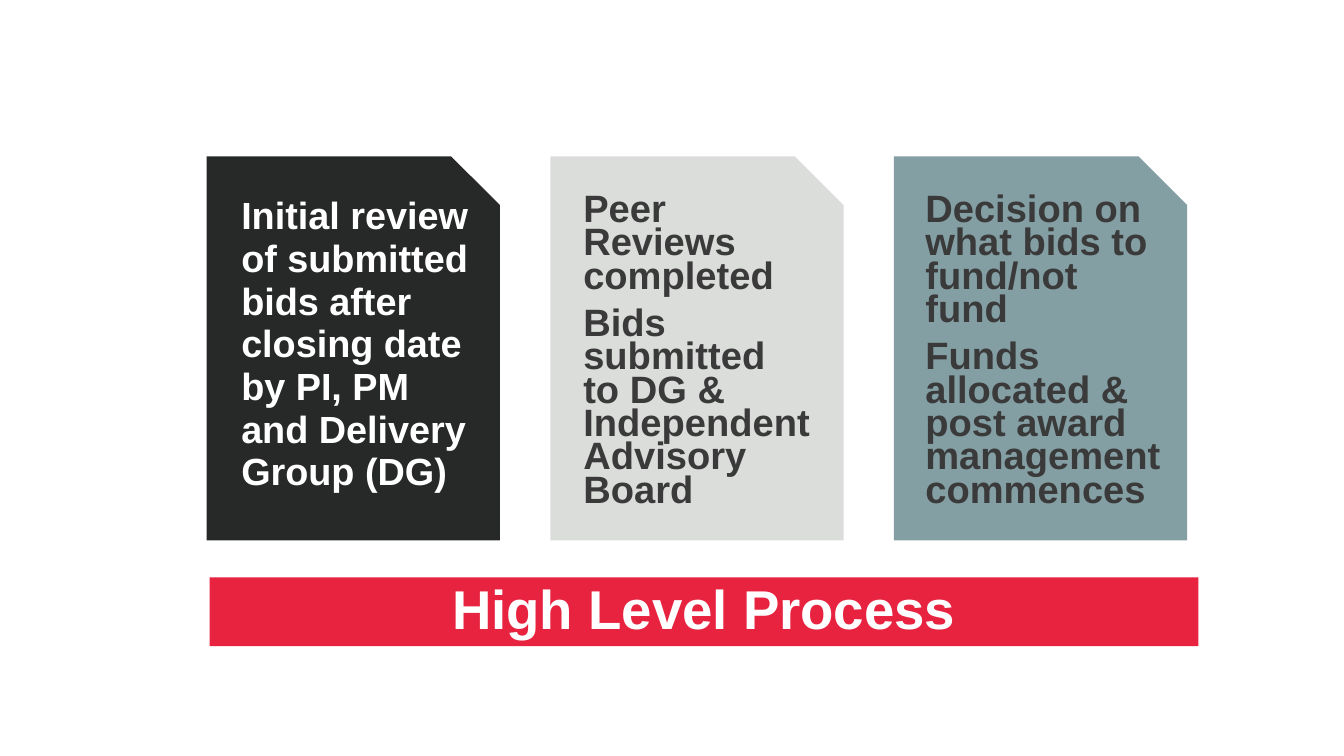
from pptx import Presentation
from pptx.dml.color import RGBColor
from pptx.enum.shapes import MSO_SHAPE
from pptx.enum.text import MSO_ANCHOR, PP_ALIGN
from pptx.oxml.ns import qn
from pptx.util import Cm, Pt

WHITE = RGBColor(0xFF, 0xFF, 0xFF)
BLACK = RGBColor(0x27, 0x29, 0x28)
INK = RGBColor(0x3A, 0x3A, 0x3A)
GREY = RGBColor(0xDB, 0xDD, 0xDB)
TEAL = RGBColor(0x84, 0x9F, 0xA4)
RED = RGBColor(0xE8, 0x23, 0x40)

TITLE = "High Level Process"
# paragraphs, card colour, text colour, text size, line spacing, text width in cm
STAGES = [
    (["Initial review of submitted bids after closing date by PI, PM and Delivery Group (DG)"],
     BLACK, WHITE, 27, 0.94, 7.34),
    (["Peer Reviews completed",
      "Bids submitted to DG & Independent Advisory Board"],
     GREY, INK, 27.2, 0.73, 7.34),
    (["Decision on what bids to fund/not fund",
      "Funds allocated & post award management commences"],
     TEAL, INK, 27.2, 0.73, 7.67),
]

CARD_LEFT, CARD_TOP = 5.21, 3.94
CARD_WIDTH, CARD_HEIGHT = 7.39, 9.68
CARD_STEP = 8.66


def place(shape, left, top, width, height):
    shape.left, shape.top = Cm(left), Cm(top)
    shape.width, shape.height = Cm(width), Cm(height)


def write(shape, texts, size, color, spacing, align=PP_ALIGN.LEFT,
          anchor=MSO_ANCHOR.TOP, top=0.0, bottom=0.0):
    frame = shape.text_frame
    frame.word_wrap = True
    frame.vertical_anchor = anchor
    frame.margin_left = frame.margin_right = Cm(0.8)
    frame.margin_top, frame.margin_bottom = Cm(top), Cm(bottom)
    for number, text in enumerate(texts):
        para = frame.add_paragraph() if number else frame.paragraphs[0]
        para.alignment = align
        para.line_spacing = spacing
        para.space_before = Pt(10 if number else 0)
        properties = para._p.get_or_add_pPr()
        properties.set("marL", "0")
        properties.set("indent", "0")
        properties.append(properties.makeelement(qn("a:buNone"), {}))
        span = para.add_run()
        span.text = text
        span.font.name = "Arial"
        span.font.size = Pt(size)
        span.font.bold = True
        span.font.color.rgb = color


deck = Presentation()
deck.slide_width, deck.slide_height = Cm(33.87), Cm(19.05)
page = deck.slides.add_slide(deck.slide_layouts[1])
title, body = page.placeholders

place(title, 5.28, 14.55, 24.92, 1.73)
title.fill.solid()
title.fill.fore_color.rgb = RED
write(title, [TITLE], 39, WHITE, 0.9, align=PP_ALIGN.CENTER, anchor=MSO_ANCHOR.MIDDLE)

for number, (texts, fill, color, size, spacing, text_width) in enumerate(STAGES):
    left = CARD_LEFT + number * CARD_STEP
    card = page.shapes.add_shape(MSO_SHAPE.SNIP_1_RECTANGLE, Cm(left), Cm(CARD_TOP),
                                 Cm(CARD_WIDTH), Cm(CARD_HEIGHT))
    card.shadow.inherit = False
    card.fill.solid()
    card.fill.fore_color.rgb = fill
    card.line.fill.background()
    if number == 0:
        box = body
        card.element.addnext(body.element)
    else:
        box = page.shapes.add_textbox(0, 0, 0, 0)
    # The text starts a little further right on the first card than on the last
    place(box, left + 0.07 - 0.04 * number, CARD_TOP, text_width, CARD_HEIGHT)
    write(box, texts, size, color, spacing, top=0.99, bottom=0.13)

deck.save("out.pptx")
